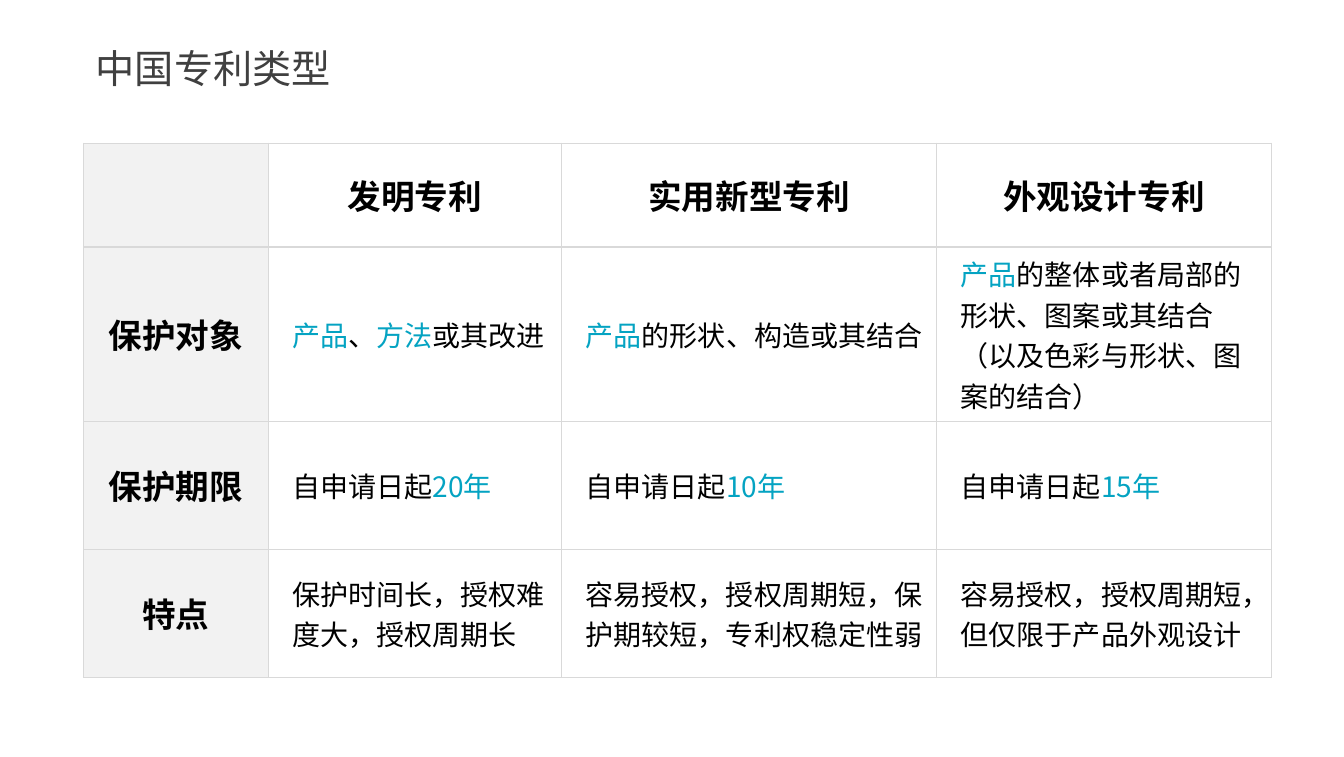
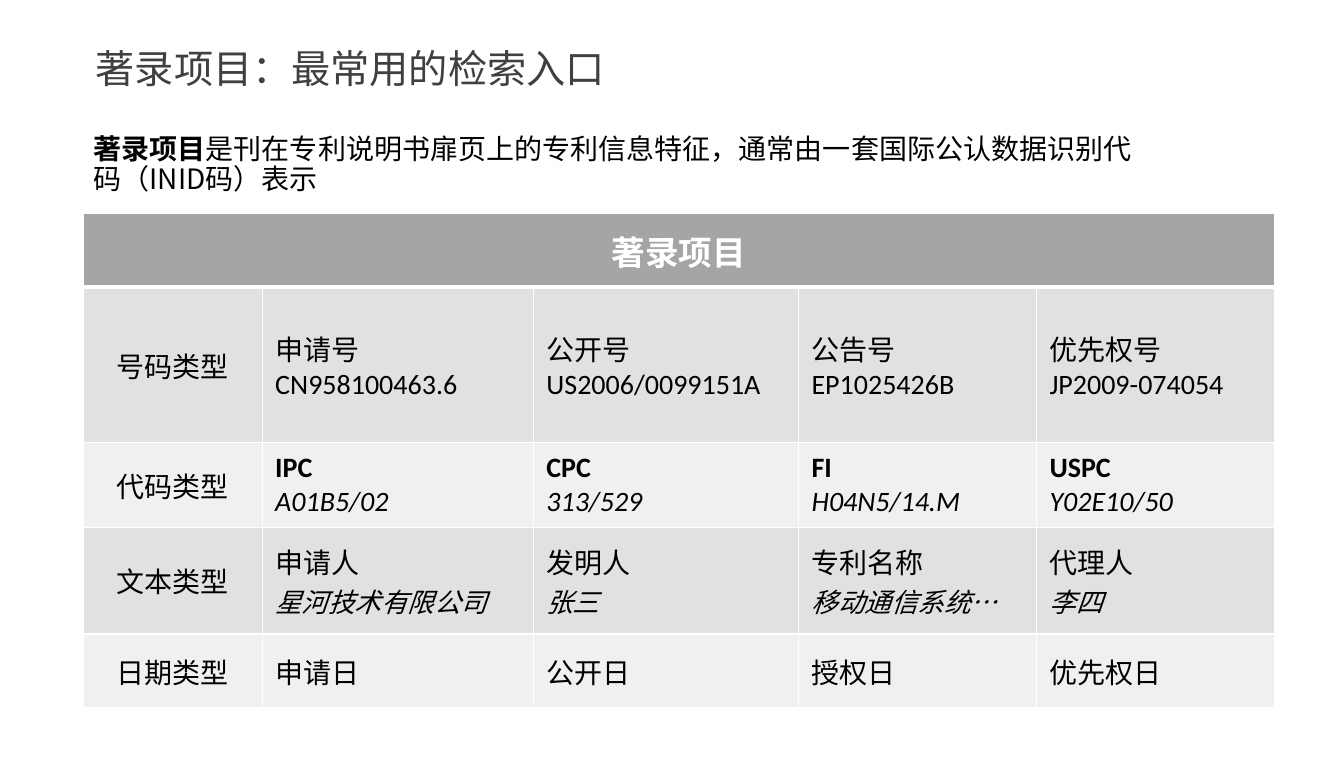
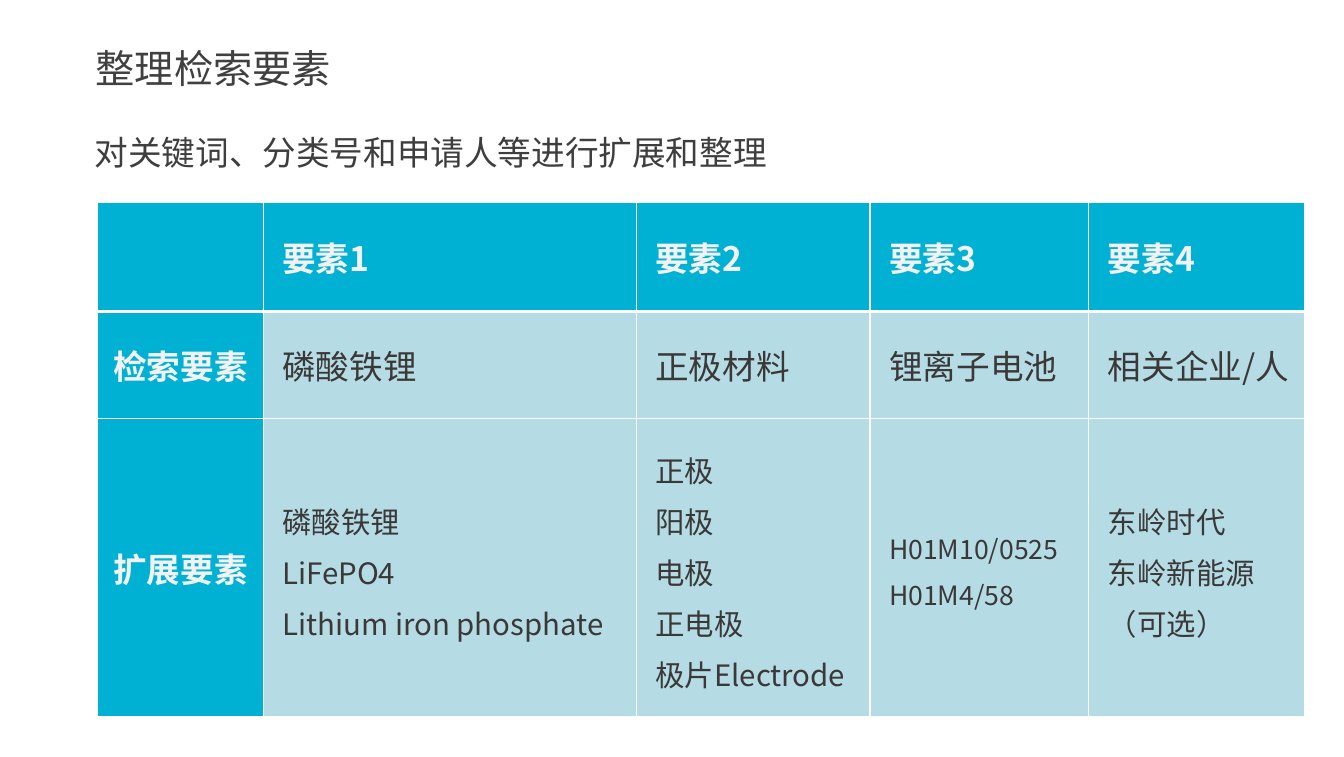
from lxml import etree
from pptx import Presentation
from pptx.dml.color import RGBColor
from pptx.enum.text import MSO_ANCHOR, MSO_AUTO_SIZE, PP_ALIGN
from pptx.oxml.ns import qn
from pptx.util import Emu, Pt

PX = 9144  # EMU per px, 100 px to the inch
CJK = "Noto Sans CJK SC"
LATIN = "Calibri"

BLACK = RGBColor(0x00, 0x00, 0x00)
WHITE = RGBColor(0xFF, 0xFF, 0xFF)
TITLE_GREY = RGBColor(0x40, 0x40, 0x40)
LEAD_GREY = RGBColor(0x3E, 0x3E, 0x3E)
BODY_GREY = RGBColor(0x3B, 0x38, 0x38)
LABEL_GREY = RGBColor(0xF2, 0xF2, 0xF2)
RULE_GREY = RGBColor(0xD9, 0xD9, 0xD9)
HEAD_GREY = RGBColor(0xA5, 0xA5, 0xA5)
BAND_DARK = RGBColor(0xE1, 0xE1, 0xE1)
BAND_LIGHT = RGBColor(0xF0, 0xF0, 0xF0)
TEAL = RGBColor(0x04, 0xA3, 0xC2)
CYAN = RGBColor(0x00, 0xB1, 0xD3)
PALE_CYAN = RGBColor(0xB5, 0xDC, 0xE5)


def px(n):
    return Emu(n * PX)


# Text
def style_run(r, size, color, name=CJK, bold=False, italic=False):
    font = r.font
    font.size, font.bold, font.italic, font.name = Pt(size), bold, italic, name
    font.color.rgb = color
    ea = etree.Element(qn("a:ea"), typeface=CJK)
    r._r.get_or_add_rPr().find(qn("a:latin")).addnext(ea)


def write(tf, paragraphs, align=PP_ALIGN.LEFT, spacing=None, **font):
    """Each paragraph is a string or a list of (text, font changes)."""
    for i, runs in enumerate(paragraphs):
        p = tf.add_paragraph() if i else tf.paragraphs[0]
        p.alignment = align
        if spacing:
            p.line_spacing = spacing
        for text, changes in [(runs, {})] if isinstance(runs, str) else runs:
            for j, line in enumerate(text.split("\n")):
                if j:
                    p.add_line_break()
                if line:
                    r = p.add_run()
                    r.text = line
                    style_run(r, **{**font, **changes})


def add_text(slide, left, top, width, height, paragraphs, **style):
    tf = slide.shapes.add_textbox(px(left), px(top), px(width), px(height)).text_frame
    tf.word_wrap = True
    write(tf, paragraphs, **style)
    return tf


def add_titled_slide(prs, title):
    slide = prs.slides.add_slide(prs.slide_layouts[6])
    tf = add_text(slide, 83, 39, 25 + 39 * len(title), 57, [title],
                  size=28, color=TITLE_GREY)
    tf.margin_left = px(12)
    tf.word_wrap = False
    tf.auto_size = MSO_AUTO_SIZE.SHAPE_TO_FIT_TEXT
    return slide


# Tables
def add_grid(slide, left, top, widths, heights):
    table = slide.shapes.add_table(len(heights), len(widths), px(left), px(top),
                                   px(sum(widths)), px(sum(heights))).table
    for column, width in zip(table.columns, widths):
        column.width = px(width)
    for row, height in zip(table.rows, heights):
        row.height = px(height)
    return table


def set_borders(cell, color, top=1, bottom=1):
    tcPr = cell._tc.get_or_add_tcPr()
    for i, (side, width) in enumerate([("L", 1), ("R", 1), ("T", top), ("B", bottom)]):
        ln = etree.Element(qn(f"a:ln{side}"), w=str(Pt(width)))
        fill = etree.SubElement(ln, qn("a:solidFill"))
        etree.SubElement(fill, qn("a:srgbClr"), val=str(color))
        tcPr.insert(i, ln)


def paint_cell(cell, fill, rule, margins, head_row=None):
    """head_row is the row number where the header has a thick rule below."""
    cell.fill.solid()
    cell.fill.fore_color.rgb = fill
    set_borders(cell, rule, top=3 if head_row == 1 else 1,
                bottom=3 if head_row == 0 else 1)
    cell.vertical_anchor = MSO_ANCHOR.MIDDLE
    left, side, edge = margins
    cell.margin_left, cell.margin_right = px(left), px(side)
    cell.margin_top = cell.margin_bottom = px(edge)


# Slides
def build_patent_types(prs):
    slide = add_titled_slide(prs, "中国专利类型")
    key = {"color": TEAL}
    rows = [
        ["", "发明专利", "实用新型专利", "外观设计专利"],
        ["保护对象",
         [("产品", key), ("、", {}), ("方法", key), ("或其改进", {})],
         [("产品", key), ("的形状、构造或其结合", {})],
         [("产品", key),
          ("的整体或者局部的形状、图案或其结合\n（以及色彩与形状、图案的结合）", {})]],
        ["保护期限"] + [[("自申请日起", {}), (years, key)]
                    for years in ("20年", "10年", "15年")],
        ["特点", "保护时间长，授权难度大，授权周期长",
         "容易授权，授权周期短，保护期较短，专利权稳定性弱",
         "容易授权，授权周期短，但仅限于产品外观设计"],
    ]
    table = add_grid(slide, 83, 142, [183, 291, 372, 332], [103, 173, 127, 127])
    for i, row in enumerate(rows):
        for j, content in enumerate(row):
            cell = table.cell(i, j)
            heading = i == 0 or j == 0
            paint_cell(cell, WHITE if j else LABEL_GREY, RULE_GREY,
                       (5 if heading else 24, 5, 2))
            write(cell.text_frame, [content],
                  align=PP_ALIGN.CENTER if heading else PP_ALIGN.LEFT,
                  size=24 if heading else 20, color=BLACK, bold=heading)


def build_bibliographic_items(prs):
    slide = add_titled_slide(prs, "著录项目：最常用的检索入口")
    add_text(slide, 83, 129, 1070, 114, [[
        ("著录项目", {"bold": True}),
        ("是刊在专利说明书扉页上的专利信息特征，"
         "通常由一套国际公认数据识别代码（INID码）表示", {}),
    ]], spacing=0.9, size=20, color=BLACK)

    codes = [("IPC", "A01B5/02"), ("CPC", "313/529"),
             ("FI", "H04N5/14.M"), ("USPC", "Y02E10/50")]
    texts = [("申请人", "星河技术有限公司"), ("发明人", "张三"),
             ("专利名称", "移动通信系统…"), ("代理人", "李四")]
    rows = [
        ["著录项目", "", "", "", ""],
        ["号码类型", "申请号\nCN958100463.6", "公开号\nUS2006/0099151A",
         "公告号\nEP1025426B", "优先权号\nJP2009-074054"],
        ["代码类型"] + [[(name + "\n", {"bold": True}), (sample, {"italic": True})]
                    for name, sample in codes],
        ["文本类型"] + [[(name + "\n", {}), (sample, {"size": 19, "italic": True})]
                    for name, sample in texts],
        ["日期类型", "申请日", "公开日", "授权日", "优先权日"],
    ]
    table = add_grid(slide, 83, 212, [177, 269, 263, 236, 236], [73, 154, 84, 106, 73])
    table.cell(0, 0).merge(table.cell(0, 4))
    for i, row in enumerate(rows):
        band = BAND_DARK if i % 2 else BAND_LIGHT
        for j, content in enumerate(row):
            cell = table.cell(i, j)
            paint_cell(cell, band if i else HEAD_GREY, WHITE, (13, 13, 7), head_row=i)
            write(cell.text_frame, [content],
                  align=PP_ALIGN.LEFT if j else PP_ALIGN.CENTER,
                  size=20 if i else 24, color=BLACK if i else WHITE,
                  name=LATIN, bold=i == 0)


def build_search_elements(prs):
    slide = add_titled_slide(prs, "整理检索要素")
    add_text(slide, 84, 106, 1174, 63, ["对关键词、分类号和申请人等进行扩展和整理"],
             spacing=1.5, size=24, color=LEAD_GREY)

    rows = [
        [[""]] + [[f"要素{n}"] for n in range(1, 5)],
        [["检索要素"], ["磷酸铁锂"], ["正极材料"], ["锂离子电池"], ["相关企业/人"]],
        [["扩展要素"],
         ["磷酸铁锂", "LiFePO4", "Lithium iron phosphate"],
         ["正极", "阳极", "电极", "正电极", "极片Electrode"],
         ["H01M10/0525", "H01M4/58"],
         ["东岭时代", "东岭新能源", "（可选）"]],
    ]
    table = add_grid(slide, 97, 201, [164, 370, 232, 217, 214], [108, 106, 296])
    for i, row in enumerate(rows):
        for j, paragraphs in enumerate(row):
            cell = table.cell(i, j)
            heading = i == 0 or j == 0
            expanded = i == 2 and j > 0
            size = (19 if j == 3 else 21) if expanded else 24
            paint_cell(cell, CYAN if heading else PALE_CYAN, WHITE,
                       (19 if j else 10, 10, 0), head_row=i)
            write(cell.text_frame, paragraphs,
                  align=PP_ALIGN.LEFT if j else PP_ALIGN.CENTER,
                  spacing=1.2 if expanded else None, size=size,
                  color=LABEL_GREY if heading else BODY_GREY, bold=heading)


def main():
    prs = Presentation()
    prs.slide_width, prs.slide_height = px(1333), px(751)
    build_patent_types(prs)
    build_bibliographic_items(prs)
    build_search_elements(prs)
    prs.save("out.pptx")


if __name__ == "__main__":
    main()
